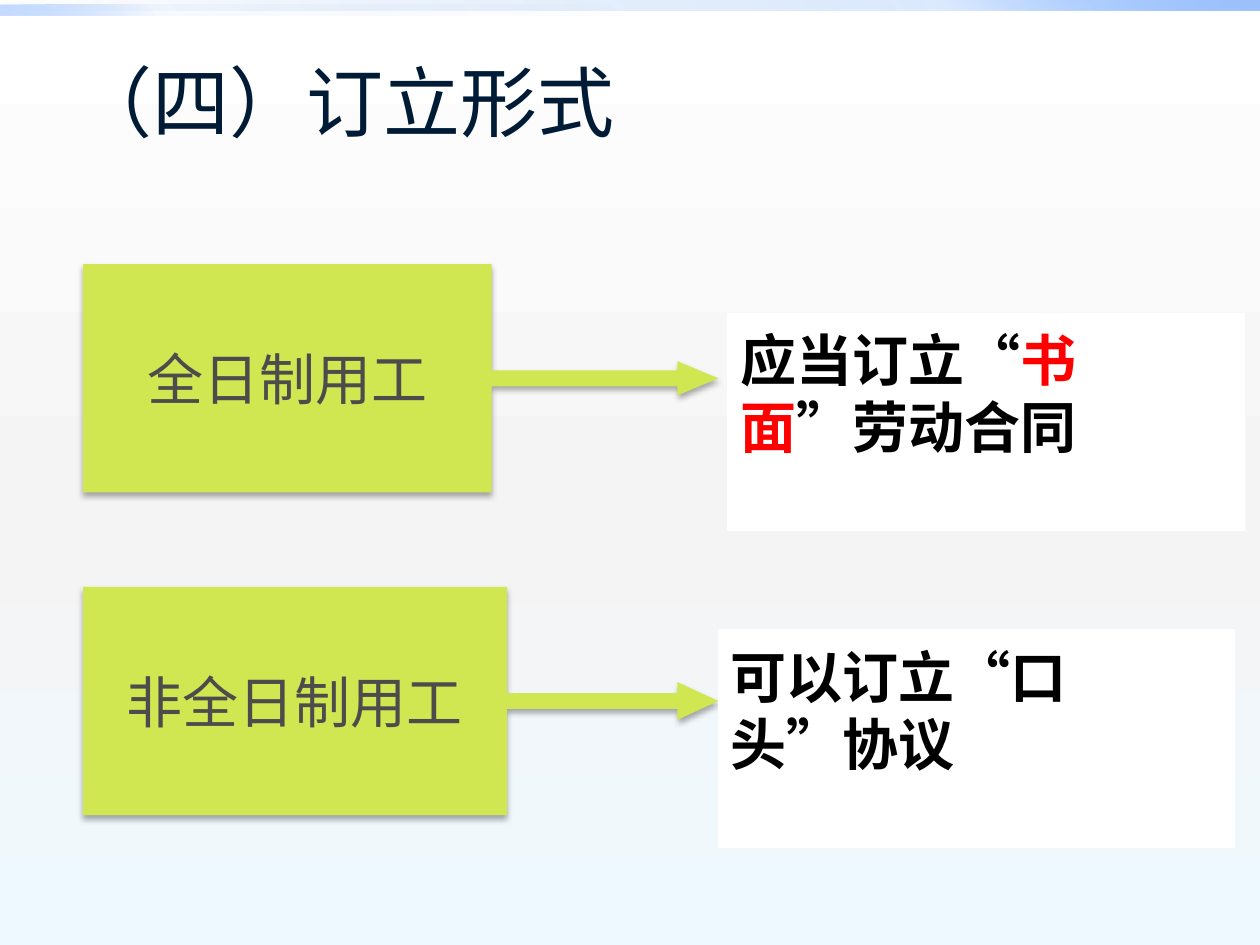
from lxml import etree
from pptx import Presentation
from pptx import util as u
from pptx.dml.color import RGBColor
from pptx.enum import shapes, text
from pptx.oxml import ns

Pt = u.Pt
HUES = {
    "white": "FFFFFF", "grey": "F4F4F4", "ice": "EEF9FF",
    "deep": "0058B7", "blue": "4F95FF", "sky": "9EC2FF",
    "lime": "D1E751", "slate": "4C4C4C", "navy": "001B36",
    "black": "000000", "red": "FF0000",
}
KIND = shapes.MSO_SHAPE


def tone(name):
    return RGBColor.from_string(HUES[name])


def node(host, tag, **attrs):
    return etree.SubElement(host, ns.qn(tag), {k: str(v) for k, v in attrs.items()})


def tint(host, name, alpha):
    color = node(host, "a:srgbClr", val=HUES[name])
    if alpha < 100:
        node(color, "a:alpha", val=alpha * 1000)


def blend(fill, host, stops, angle):
    fill.gradient()
    grad = next(host.iter(ns.qn("a:gradFill")))
    for child in list(grad):
        grad.remove(child)
    steps = node(grad, "a:gsLst")
    for place, name, alpha in stops:
        tint(node(steps, "a:gs", pos=place * 1000), name, alpha)
    node(grad, "a:lin", ang=angle * 60000, scaled=0)


def shape(slide, kind, box):
    item = slide.shapes.add_shape(kind, *map(Pt, box))
    item.shadow.inherit = False
    item.line.fill.background()
    return item


def write(item, runs, size, font, bold=False, align=text.PP_ALIGN.LEFT):
    para = item.text_frame.paragraphs[0]
    para.alignment = align
    for words, name in runs:
        run = para.add_run()
        run.text = words
        run.font.size = Pt(size)
        run.font.name = font
        run.font.bold = bold
        run.font.color.rgb = tone(name)
        node(run.font._element, "a:ea", typeface="Noto Sans CJK SC")
    return para


def stripe(slide, box, stops, angle):
    bar = shape(slide, KIND.RECTANGLE, box)
    blend(bar.fill, bar._element, stops, angle)


def title(slide, words):
    box = slide.shapes.add_textbox(Pt(36), Pt(26.6), Pt(647), Pt(62))
    box.text_frame.word_wrap = True
    box.text_frame.vertical_anchor = text.MSO_ANCHOR.MIDDLE
    write(box, [(words, "navy")], 44, "Roboto")


def panel(slide, left, top, runs):
    box = shape(slide, KIND.RECTANGLE, (left, top, 295, 124))
    box.fill.solid()
    box.fill.fore_color.rgb = tone("white")
    box.line.color.rgb = tone("white")
    box.line.width = Pt(0.75)
    frame = box.text_frame
    frame.word_wrap = True
    frame.vertical_anchor = text.MSO_ANCHOR.TOP
    frame.margin_top = Pt(7)
    para = write(box, runs, 32, "Noto Sans CJK SC", bold=True)
    para.line_spacing = Pt(38.4)


def callout(slide, top, words, head, body):
    item = shape(slide, KIND.RIGHT_ARROW_CALLOUT, (47.5, top, 363, 130.4))
    for spot, value in enumerate((0.07, head, 0.18, body)):
        item.adjustments[spot] = value
    item.fill.solid()
    item.fill.fore_color.rgb = tone("lime")
    glow = node(item._element.spPr.find(ns.qn("a:effectLst")), "a:outerShdw",
                blurRad=Pt(3.5), dist=Pt(2.2), dir=90 * 60000, rotWithShape=0)
    tint(glow, "black", 32)
    item.text_frame.word_wrap = False
    item.text_frame.vertical_anchor = text.MSO_ANCHOR.MIDDLE
    write(item, [(words, "slate")], 32, "Arial", align=text.PP_ALIGN.CENTER)


def main():
    deck = Presentation()
    deck.slide_width, deck.slide_height = Pt(720), Pt(540)
    slide = deck.slides.add_slide(deck.slide_layouts[6])
    blend(slide.background.fill, slide._element,
          [(0, "white", 100), (55, "grey", 100), (100, "ice", 100)], 90)
    stripe(slide, (0, 0, 720, 5.8),
           [(0, "deep", 0), (75, "blue", 20), (100, "sky", 100)], 315)
    stripe(slide, (0, 2.9, 360, 5.8),
           [(0, "deep", 0), (75, "blue", 5), (100, "sky", 60)], 135)
    panel(slide, 416, 179, [("应当订立“", "black"), ("书面", "red"),
                            ("”劳动合同", "black")])
    callout(slide, 151, "全日制用工", 0.075, 0.643)
    callout(slide, 335.4, "非全日制用工", 0.083, 0.667)
    title(slide, "（四）订立形式")
    panel(slide, 410.4, 360, [("可以订立“口头”协议", "black")])
    deck.save("out.pptx")


if __name__ == "__main__":
    main()
